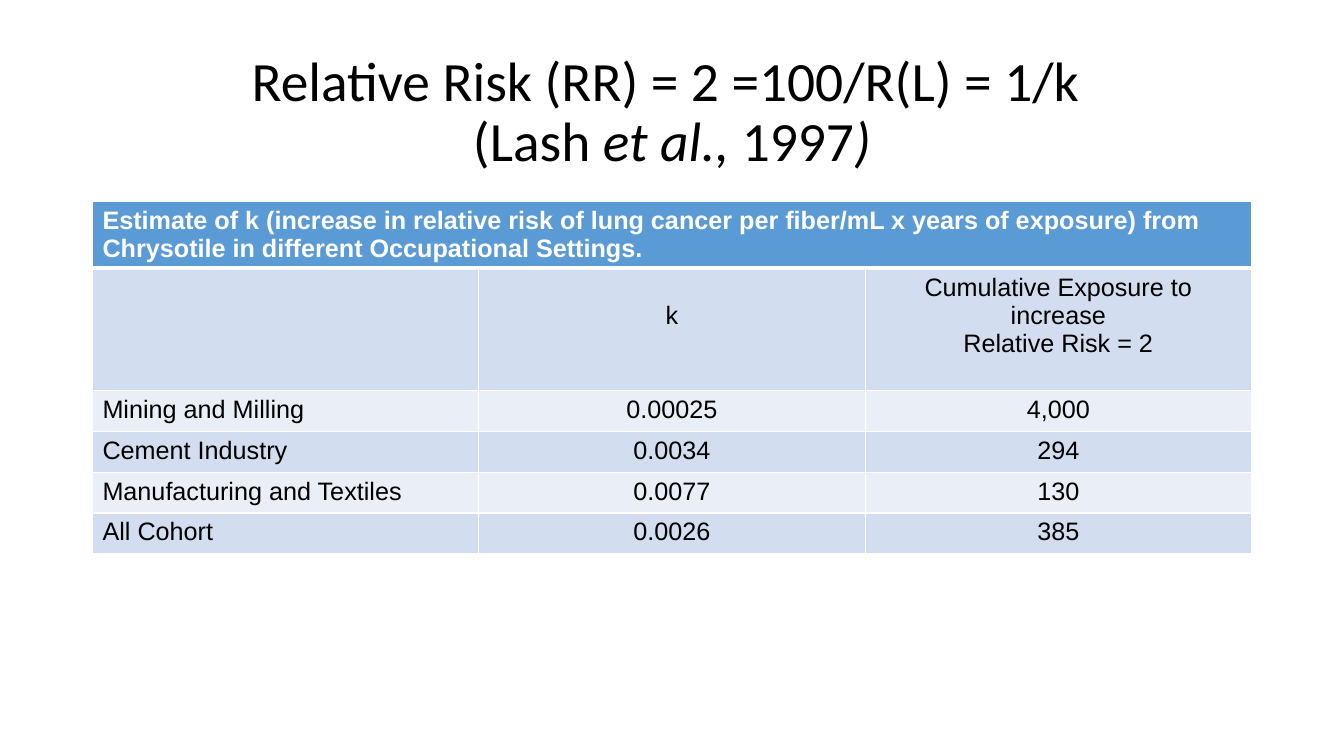
from dataclasses import dataclass

from lxml.etree import SubElement
from pptx import Presentation
from pptx.dml.color import RGBColor
from pptx.enum.text import MSO_ANCHOR, MSO_AUTO_SIZE, PP_ALIGN
from pptx.oxml.ns import qn
from pptx.util import Cm, Pt


@dataclass(frozen=True)
class Theme:
    ink: str = "000000"
    white: str = "FFFFFF"
    header: str = "5B9BD5"
    dark_band: str = "D2DEEF"
    light_band: str = "EAEFF7"
    title_font: str = "Calibri"
    table_font: str = "Arial"
    title_size: float = 39.6
    table_size: float = 18
    thin_border: float = 1
    header_border: float = 3


@dataclass(frozen=True)
class Setting:
    name: str
    k: str
    exposure: str


THEME = Theme()
CAPTION = (
    "Estimate of k (increase in relative risk of lung cancer per fiber/mL x years "
    "of exposure) from Chrysotile in different Occupational Settings."
)
COLUMN_HEADS = ("", "k", "Cumulative Exposure to increase\nRelative Risk = 2")
SETTINGS = (
    Setting("Mining and Milling", "0.00025", "4,000"),
    Setting("Cement Industry", "0.0034", "294"),
    Setting("Manufacturing and Textiles", "0.0077", "130"),
    Setting("All Cohort", "0.0026", "385"),
)
LEFT, WIDTH = Cm(2.33), Cm(29.21)
CAPTION_HEIGHT, HEAD_HEIGHT, SETTING_HEIGHT = Cm(1.66), Cm(3.08), Cm(1.03)


def add_text(para, text: str, *, font: str, size: float, color: str = THEME.ink,
             bold: bool = False, italic: bool = False) -> None:
    span = para.add_run()
    span.text = text
    span.font.name = font
    span.font.size = Pt(size)
    span.font.bold = bold
    span.font.italic = italic
    span.font.color.rgb = RGBColor.from_string(color)


def add_title(page) -> None:
    box = page.shapes.title
    box.left, box.top, box.width, box.height = LEFT, Cm(1.01), WIDTH, Cm(3.68)
    frame = box.text_frame
    frame.auto_size = MSO_AUTO_SIZE.NONE
    frame.word_wrap = True
    frame.vertical_anchor = MSO_ANCHOR.MIDDLE
    para = frame.paragraphs[0]
    para.alignment = PP_ALIGN.CENTER
    para.line_spacing = 0.9
    style = {"font": THEME.title_font, "size": THEME.title_size}
    add_text(para, "Relative Risk (RR) = 2 =100/R(L) = 1/k ", **style)
    para.add_line_break()
    para.line_spacing = 0.9
    for text, italic in (("(Lash ", False), ("et al., ", True), ("1997", False), (")", True)):
        add_text(para, text, italic=italic, **style)


def set_borders(cell, *, top: float, bottom: float) -> None:
    properties = cell._tc.get_or_add_tcPr()
    widths = {"lnL": THEME.thin_border, "lnR": THEME.thin_border, "lnT": top, "lnB": bottom}
    for side, width in widths.items():
        line = SubElement(properties, qn(f"a:{side}"), w=str(Pt(width)))
        fill = SubElement(line, qn("a:solidFill"))
        SubElement(fill, qn("a:srgbClr"), val=THEME.white)


def fill_cell(cell, text: str, *, color: str = THEME.ink, bold: bool = False,
              alignment: PP_ALIGN = PP_ALIGN.LEFT) -> None:
    frame = cell.text_frame
    for index, line in enumerate(text.split("\n") if text else []):
        para = frame.add_paragraph() if index else frame.paragraphs[0]
        para.alignment = alignment
        add_text(para, line, font=THEME.table_font, size=THEME.table_size,
                 color=color, bold=bold)


def add_risk_table(page) -> None:
    rows = [(CAPTION, "", ""), COLUMN_HEADS]
    rows += [(setting.name, setting.k, setting.exposure) for setting in SETTINGS]
    heights = [CAPTION_HEIGHT, HEAD_HEIGHT] + [SETTING_HEIGHT] * len(SETTINGS)
    table = page.shapes.add_table(
        len(rows), len(COLUMN_HEADS), LEFT, Cm(5.08), WIDTH, sum(heights)
    ).table
    table.first_row = table.horz_banding = False
    for row_index, (texts, height) in enumerate(zip(rows, heights)):
        is_caption = row_index == 0
        band = THEME.dark_band if row_index % 2 else THEME.light_band
        table.rows[row_index].height = height
        for column_index, text in enumerate(texts):
            cell = table.cell(row_index, column_index)
            set_borders(
                cell,
                top=THEME.header_border if row_index == 1 else THEME.thin_border,
                bottom=THEME.header_border if is_caption else THEME.thin_border,
            )
            cell.fill.solid()
            cell.fill.fore_color.rgb = RGBColor.from_string(THEME.header if is_caption else band)
            fill_cell(
                cell, text, bold=is_caption,
                color=THEME.white if is_caption else THEME.ink,
                alignment=PP_ALIGN.CENTER if column_index else PP_ALIGN.LEFT,
            )
    table.cell(0, 0).merge(table.cell(0, len(COLUMN_HEADS) - 1))
    table.cell(1, 1).margin_top = Cm(0.84)


def main() -> None:
    deck = Presentation()
    deck.slide_width, deck.slide_height = Cm(33.87), Cm(19.05)
    page = deck.slides.add_slide(deck.slide_layouts[5])
    add_title(page)
    add_risk_table(page)
    deck.save("out.pptx")


if __name__ == "__main__":
    main()
